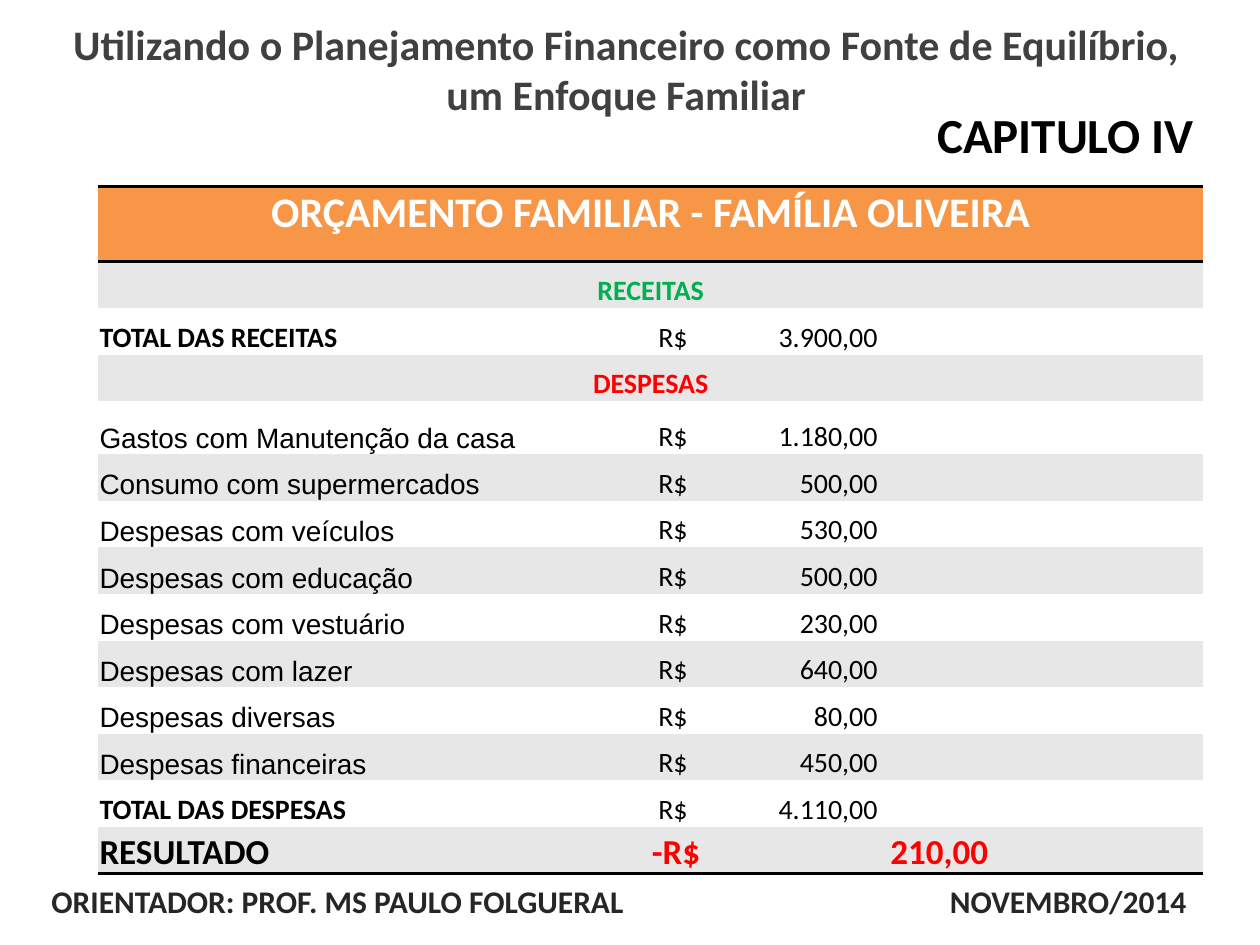
from lxml import etree
from pptx import Presentation
from pptx import util as u
from pptx.dml.color import RGBColor
from pptx.enum import text
from pptx.oxml import ns

COLORS = {"black": "000000", "white": "FFFFFF", "orange": "F79646", "band": "E7E7E7",
          "green": "00B050", "red": "FF0000", "title": "404040", "footer": "262626"}
NO_STYLE = "{2D5ABB26-0587-4C30-8999-92F81FD0307C}"
LEFT, CENTER = text.PP_ALIGN.LEFT, text.PP_ALIGN.CENTER
MIDDLE, BOTTOM = text.MSO_ANCHOR.MIDDLE, text.MSO_ANCHOR.BOTTOM


def rgb(name):
    return RGBColor.from_string(COLORS[name])


class Deck:
    """Keeps the style and the current slide; lengths are shares of the slide."""

    def __init__(self, width, height):
        self.prs = Presentation()
        self.prs.slide_width, self.prs.slide_height = u.Inches(width), u.Inches(height)
        self.s = self.prs.slides.add_slide(self.prs.slide_layouts[6])

    def box(self, x, y, w, h):
        width, height = self.prs.slide_width, self.prs.slide_height
        return int(x * width), int(y * height), int(w * width), int(h * height)

    def set_text(self, tf, content, size, color="black", bold=True, font="Calibri",
                 align=LEFT, tab=None):
        p = tf.paragraphs[0]
        p.text, p.alignment = content, align
        if tab:
            tabs = etree.SubElement(p._p.get_or_add_pPr(), ns.qn("a:tabLst"))
            etree.SubElement(tabs, ns.qn("a:tab"), pos=str(u.Inches(tab)), algn="r")
        f = p.font
        f.name, f.size, f.bold = font, u.Pt(size), bold
        f.color.rgb = rgb(color)

    def label(self, place, content, size, wrap=True, anchor=MIDDLE, **style):
        tf = self.s.shapes.add_textbox(*self.box(*place)).text_frame
        tf.word_wrap, tf.vertical_anchor = wrap, anchor
        self.set_text(tf, content, size, **style)

    def table(self, place, heights):
        frame = self.s.shapes.add_table(len(heights), 2, *self.box(*place))
        t = frame.table
        t.first_row = t.horz_banding = False
        t._tbl.tblPr.find(ns.qn("a:tableStyleId")).text = NO_STYLE
        for row, h in zip(t.rows, heights):
            row.height = int(h * self.prs.slide_height)
        return t

    def border(self, cell, sides):
        for side in sides:
            ln = etree.SubElement(cell._tc.get_or_add_tcPr(), ns.qn("a:ln" + side),
                                  w=str(u.Pt(2)))
            fill = etree.SubElement(ln, ns.qn("a:solidFill"))
            etree.SubElement(fill, ns.qn("a:srgbClr"), val=COLORS["black"])

    def cell(self, cell, fill, content="", size=16, sides="", left=0.01, bottom=0, **style):
        self.border(cell, sides)
        cell.fill.solid()
        cell.fill.fore_color.rgb = rgb(fill)
        cell.vertical_anchor = BOTTOM
        cell.margin_left, cell.margin_bottom = u.Inches(left), u.Inches(bottom)
        cell.margin_right = cell.margin_top = u.Inches(0.01)
        self.set_text(cell.text_frame, content, size, **style)

    def banner(self, t, i, fill, content, **style):
        t.cell(i, 0).merge(t.cell(i, 1))
        for j, words in enumerate((content, "")):
            self.cell(t.cell(i, j), fill, words, align=CENTER, **style)


# Budget rows: a single text is a section heading, a pair is label and amount
ROWS = [
    ("RECEITAS",),
    ("TOTAL DAS RECEITAS", "3.900,00"),
    ("DESPESAS",),
    ("Gastos com Manutenção da casa", "1.180,00"),
    ("Consumo com supermercados", "500,00"),
    ("Despesas com veículos", "530,00"),
    ("Despesas com educação", "500,00"),
    ("Despesas com vestuário", "230,00"),
    ("Despesas com lazer", "640,00"),
    ("Despesas diversas", "80,00"),
    ("Despesas financeiras", "450,00"),
    ("TOTAL DAS DESPESAS", "4.110,00"),
    ("RESULTADO", "210,00"),
]
SECTION_COLORS = {"RECEITAS": "green", "DESPESAS": "red"}


def main():
    d = Deck(10, 7.5)

    # Budget table
    heights = [0.59 / 7.5] + [0.37 / 7.5] * len(ROWS)
    heights[4] = 0.42 / 7.5
    t = d.table((0.078, 1.48 / 7.5, 0.877, sum(heights)), heights)
    d.banner(t, 0, "orange", "ORÇAMENTO FAMILIAR - FAMÍLIA OLIVEIRA", size=24,
             color="white", sides="TB", bottom=0.18)
    for i, (name, *amount) in enumerate(ROWS, 1):
        fill = "band" if i % 2 else "white"
        label, value = t.cell(i, 0), t.cell(i, 1)
        if not amount:
            d.banner(t, i, fill, name, color=SECTION_COLORS[name])
        elif name == "RESULTADO":
            d.cell(label, fill, name, size=20, sides="B")
            d.cell(value, fill, "-R$\t" + amount[0], size=20, sides="B",
                   color="red", tab=2.67)
        else:
            total = name.startswith("TOTAL")
            d.cell(label, fill, name, bold=total, font="Calibri" if total else "Arial")
            d.cell(value, fill, "R$\t" + amount[0], bold=False, left=0.06, tab=1.74)

    # Chapter, title and footer
    d.label((0.734, 0.104, 0.226, 0.076), "CAPITULO IV", 28, wrap=False,
            anchor=text.MSO_ANCHOR.TOP)
    d.label((0.047, 0, 0.9, 0.145), "Utilizando o Planejamento Financeiro como Fonte de "
            "Equilíbrio, um Enfoque Familiar", 24, color="title", align=CENTER)
    d.label((0.031, 0.927, 0.93, 0.053),
            "ORIENTADOR: PROF. MS PAULO FOLGUERAL\tNOVEMBRO/2014", 18,
            color="footer", tab=9.01)

    d.prs.save("out.pptx")


if __name__ == "__main__":
    main()
